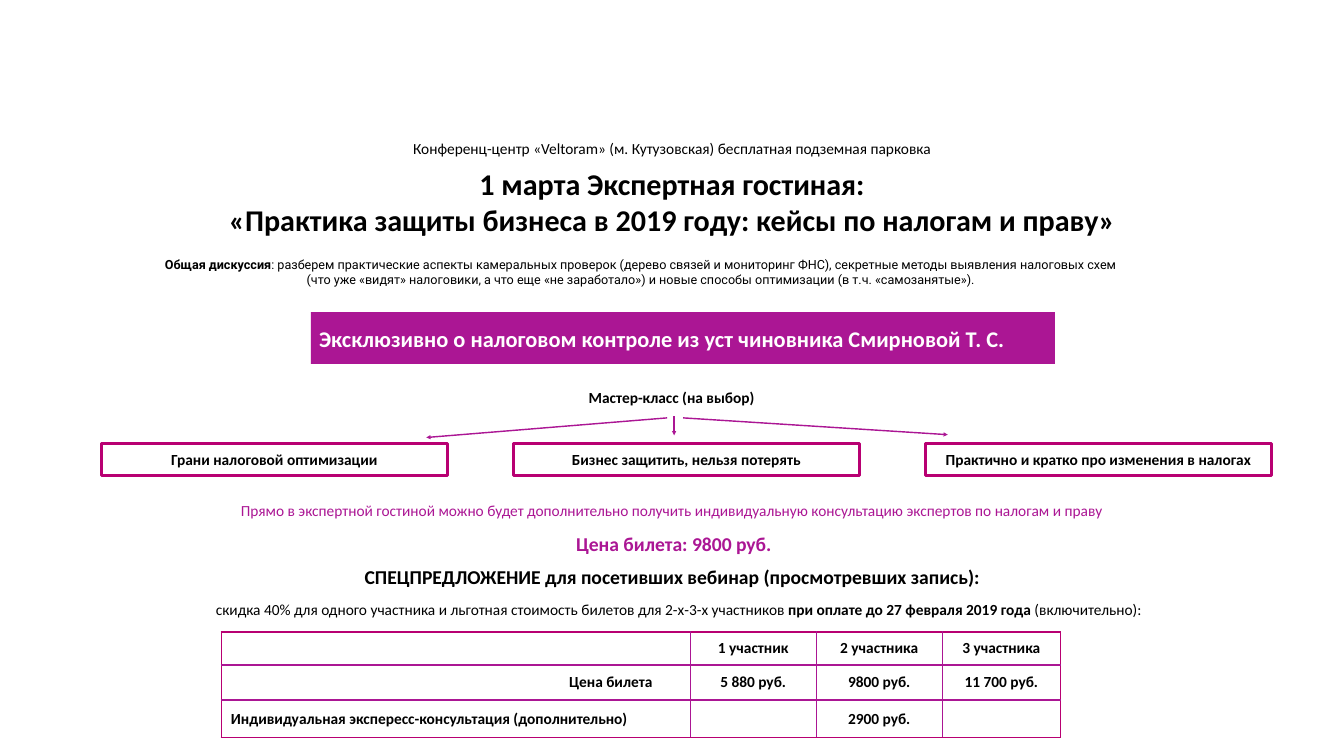
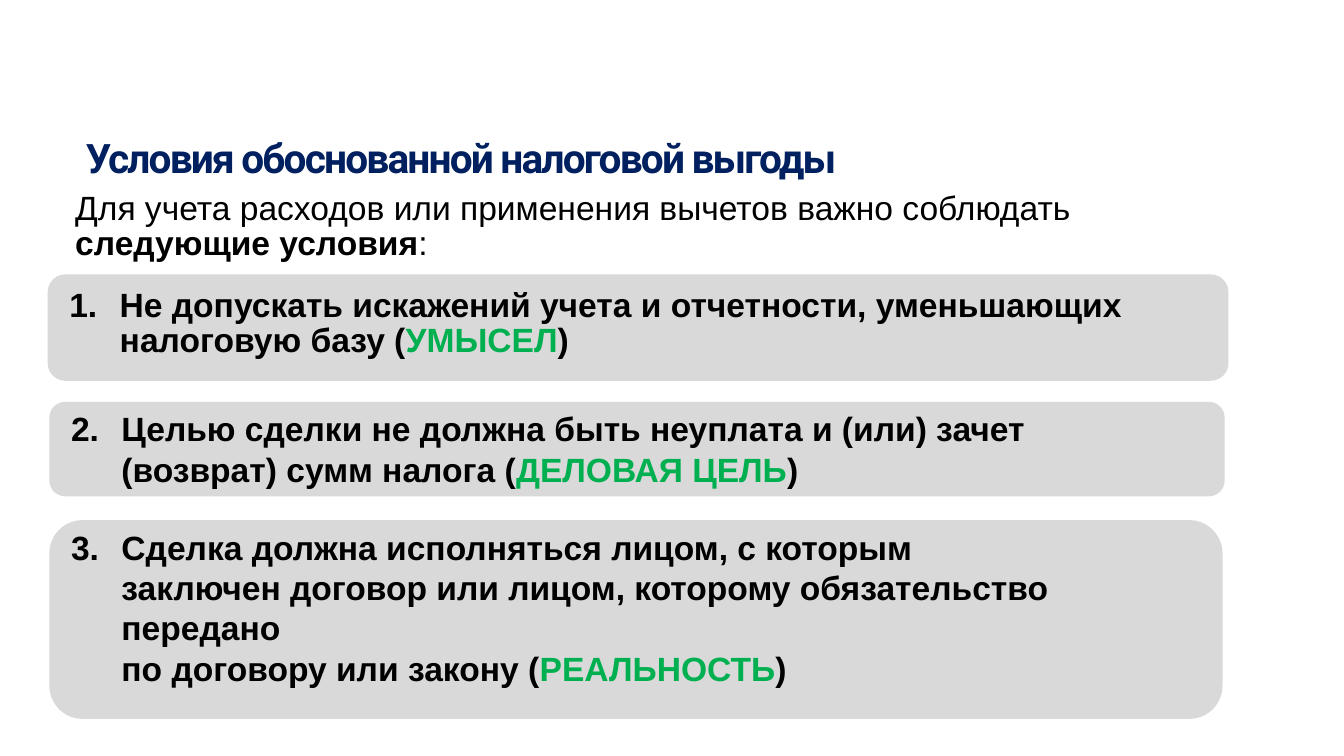
import pptx
import pptx.util
import pptx.dml.color
import pptx.enum.shapes
import pptx.enum.text
import pptx.oxml.ns
from lxml import etree

Pt = pptx.util.Pt
RGB = pptx.dml.color.RGBColor
KIND = pptx.enum.shapes.MSO_SHAPE
ALIGN = pptx.enum.text.PP_ALIGN
ANCHOR = pptx.enum.text.MSO_ANCHOR
qn = pptx.oxml.ns.qn

BLACK = RGB(0, 0, 0)
WHITE = RGB(255, 255, 255)
PLUM = RGB(0xAB, 0x16, 0x94)
ROSE = RGB(0xB8, 0x00, 0x72)
NAVY = RGB(0x00, 0x20, 0x60)
GREEN = RGB(0x00, 0xB0, 0x50)
GREY = RGB(0xD9, 0xD9, 0xD9)
PAD = 9.4


def write(frame, parts, size=22, font="Calibri", color=BLACK, bold=False,
          align=ALIGN.LEFT, wrap=True, anchor=ANCHOR.TOP, pad=PAD,
          lead=None, track=None, start=None):
    frame.word_wrap = wrap
    frame.vertical_anchor = anchor
    frame.margin_left = frame.margin_right = Pt(pad)
    frame.margin_top = frame.margin_bottom = Pt(pad)
    para = frame.paragraphs[0]
    para.alignment = align
    if lead:
        para.line_spacing = Pt(lead)
    if start:
        props = para._p.get_or_add_pPr()
        props.set("marL", str(Pt(72)))
        props.set("indent", str(-Pt(72)))
        mark = etree.SubElement(props, qn("a:buAutoNum"), type="arabicPeriod")
        mark.set("startAt", str(start))
    for part in [parts] if isinstance(parts, str) else parts:
        text, look = (part, {}) if isinstance(part, str) else part
        for index, line in enumerate(text.split("\n")):
            if index:
                para.add_line_break()
            if not line:
                continue
            run = para.add_run()
            run.text = line
            run.font.name = font
            run.font.size = Pt(size)
            run.font.bold = look.get("bold", bold)
            run.font.color.rgb = look.get("color", color)
            if track:
                run._r.get_or_add_rPr().set("spc", str(round(track * 100)))


def label(slide, box, parts, **look):
    area = slide.shapes.add_textbox(*map(Pt, box))
    write(area.text_frame, parts, **look)


def panel(slide, box, kind=KIND.RECTANGLE, fill=None, line=None):
    shape = slide.shapes.add_shape(kind, *map(Pt, box))
    shape.shadow.inherit = False
    if fill is None:
        shape.fill.background()
    else:
        shape.fill.solid()
        shape.fill.fore_color.rgb = fill
    if line is None:
        shape.line.fill.background()
    else:
        shape.line.color.rgb = line
        shape.line.width = Pt(4)
    return shape


def arrow(slide, *ends):
    line = slide.shapes.add_connector(
        pptx.enum.shapes.MSO_CONNECTOR.STRAIGHT, *map(Pt, ends))
    line.line.color.rgb = PLUM
    line.line.width = Pt(2)
    props = line._element.spPr
    etree.SubElement(props.find(qn("a:ln")), qn("a:tailEnd"), type="triangle")
    etree.SubElement(props, qn("a:effectLst"))


def center(slide, box, parts, **look):
    label(slide, box, parts, align=ALIGN.CENTER, wrap=False, **look)


def intro(slide, left, top):
    center(slide, (left + 458, top, 834, 47),
           "Конференц-центр «Veltoram» (м. Кутузовская) бесплатная подземная парковка")
    center(slide, (left + 184, top + 38, 1382, 129),
           "1 марта Экспертная гостиная:\n"
           "«Практика защиты бизнеса в 2019 году: кейсы по налогам и праву»",
           size=43, bold=True)
    label(slide, (left, top + 168, 1661, 63),
          [("Общая дискуссия", {"bold": True}),
           ": разберем практические аспекты камеральных проверок (дерево связей и "
           "мониторинг ФНС), секретные методы выявления налоговых схем\n"
           "(что уже «видят» налоговики, а что еще «не заработало») и новые способы "
           "оптимизации (в т.ч. «самозанятые»)."],
          size=18, font="Roboto", align=ALIGN.CENTER)
    banner = panel(slide, (left + 359, top + 257, 1063, 74), fill=PLUM)
    write(banner.text_frame,
          "Эксклюзивно о налоговом контроле из уст чиновника Смирновой Т. С.",
          size=32, color=WHITE, bold=True, anchor=ANCHOR.MIDDLE, pad=12, wrap=False)


def choice(slide, left, top):
    center(slide, (left + 677, top, 275, 47), "Мастер-класс (на выбор)", bold=True)
    for x, y, tox, toy in ((831, 52, 1209, 76), (808, 52, 464, 80), (818, 50, 818, 77)):
        arrow(slide, left + x, top + y, left + tox, top + toy)
    names = ("Грани налоговой оптимизации", "Бизнес защитить, нельзя потерять",
             "Практично и кратко про изменения в налогах")
    for index, name in enumerate(names):
        frame = panel(slide, (left + 588.5 * index, top + 89, 494, 45), line=ROSE)
        write(frame.text_frame, name, bold=True, align=ALIGN.CENTER,
              anchor=ANCHOR.MIDDLE, wrap=False, pad=0)


def offer(slide, left, top):
    center(slide, (left + 38, top, 1345, 47),
           "Прямо в экспертной гостиной можно будет дополнительно получить "
           "индивидуальную консультацию экспертов по налогам и праву", color=PLUM)
    center(slide, (left + 554, top + 44, 319, 55), "Цена билета: 9800 руб.",
           size=28, color=PLUM, bold=True)
    center(slide, (left + 223, top + 92, 976, 55),
           "СПЕЦПРЕДЛОЖЕНИЕ для посетивших вебинар (просмотревших запись):",
           size=28, bold=True)
    center(slide, (left, top + 142, 1441, 47),
           ["скидка 40% для одного участника и льготная стоимость билетов для "
            "2-х-3-х участников ",
            ("при оплате до 27 февраля 2019 года", {"bold": True}),
            " (включительно):"])


def edge(cell, sides):
    props = cell._tc.get_or_add_tcPr()
    for side in "LRTB":
        line = etree.SubElement(props, qn("a:ln" + side), w=str(Pt(2)))
        fill = etree.SubElement(line, qn("a:solidFill"))
        color = ROSE if side in sides else PLUM
        etree.SubElement(fill, qn("a:srgbClr"), val=str(color))


def prices(slide, left, top):
    rows = (("", "1 участник", "2 участника", "3 участника"),
            ("Цена билета", "5 880 руб.", "9800 руб.", "11 700 руб."),
            ("Индивидуальная экспересс-консультация (дополнительно)", "",
             "2900 руб.", ""))
    wide, high = (670, 180, 180, 169), (47, 50, 54)
    frame = slide.shapes.add_table(3, 4, Pt(left), Pt(top), Pt(sum(wide)), Pt(sum(high)))
    table = frame.table
    table.first_row = table.horz_banding = False
    for col, width in zip(table.columns, wide):
        col.width = Pt(width)
    for r, texts in enumerate(rows):
        table.rows[r].height = Pt(high[r])
        for c, text in enumerate(texts):
            cell = table.cell(r, c)
            edge(cell, ("L" if c == 0 else "R" if c == 3 else "")
                 + ("T" if r == 0 else "B" if r == 2 else ""))
            cell.fill.background()
            align = ALIGN.CENTER if c else (ALIGN.LEFT, ALIGN.RIGHT, ALIGN.LEFT)[r]
            write(cell.text_frame, text, bold=True, align=align)
            cell.vertical_anchor = ANCHOR.MIDDLE
            cell.margin_top = cell.margin_bottom = 0
            cell.margin_left = Pt(0 if c else 14)
            cell.margin_right = Pt(0 if c else 54)


def event(slide):
    intro(slide, 85, 189)
    choice(slide, 145, 545)
    offer(slide, 249, 706)
    prices(slide, 316, 903)


def rule(slide, box, start, text, key, width, drop=0, lead=None):
    bar = panel(slide, box, kind=KIND.ROUNDED_RECTANGLE, fill=GREY)
    bar.adjustments[0] = 0.167
    left, top, _, high = box
    label(slide, (left + 21.6, top + drop, width, high - drop),
          [text + " (", (key, {"color": GREEN}), ")"],
          size=48, font="Arial", bold=True, lead=lead, start=start)


def terms(slide):
    label(slide, (113, 191.5, 1388, 87), "Условия обоснованной налоговой выгоды",
          size=58, font="Roboto", color=NAVY, bold=True, lead=58, track=-2.6)
    label(slide, (98, 265.7, 1536, 120),
          ["Для учета расходов или применения вычетов важно соблюдать\n",
           ("следующие условия", {"bold": True}), ":"],
          size=48, font="Arial", lead=50)
    rule(slide, (68, 392, 1687, 152), 1,
         "Не допускать искажений учета и отчетности, уменьшающих налоговую базу",
         "УМЫСЕЛ", 1655, drop=11.5, lead=50)
    rule(slide, (70.5, 574, 1679, 135), 2,
         "Целью сделки не должна быть неуплата и (или) зачет (возврат) сумм налога",
         "ДЕЛОВАЯ ЦЕЛЬ", 1427)
    rule(slide, (70.5, 743, 1676, 284), 3,
         "Сделка должна исполняться лицом, с которым заключен договор или лицом, "
         "которому обязательство передано\nпо договору или закону",
         "РЕАЛЬНОСТЬ", 1427)


def main():
    deck = pptx.Presentation()
    deck.slide_width, deck.slide_height = Pt(1920), Pt(1080)
    for build in (event, terms):
        build(deck.slides.add_slide(deck.slide_layouts[6]))
    deck.save("out.pptx")


if __name__ == "__main__":
    main()
